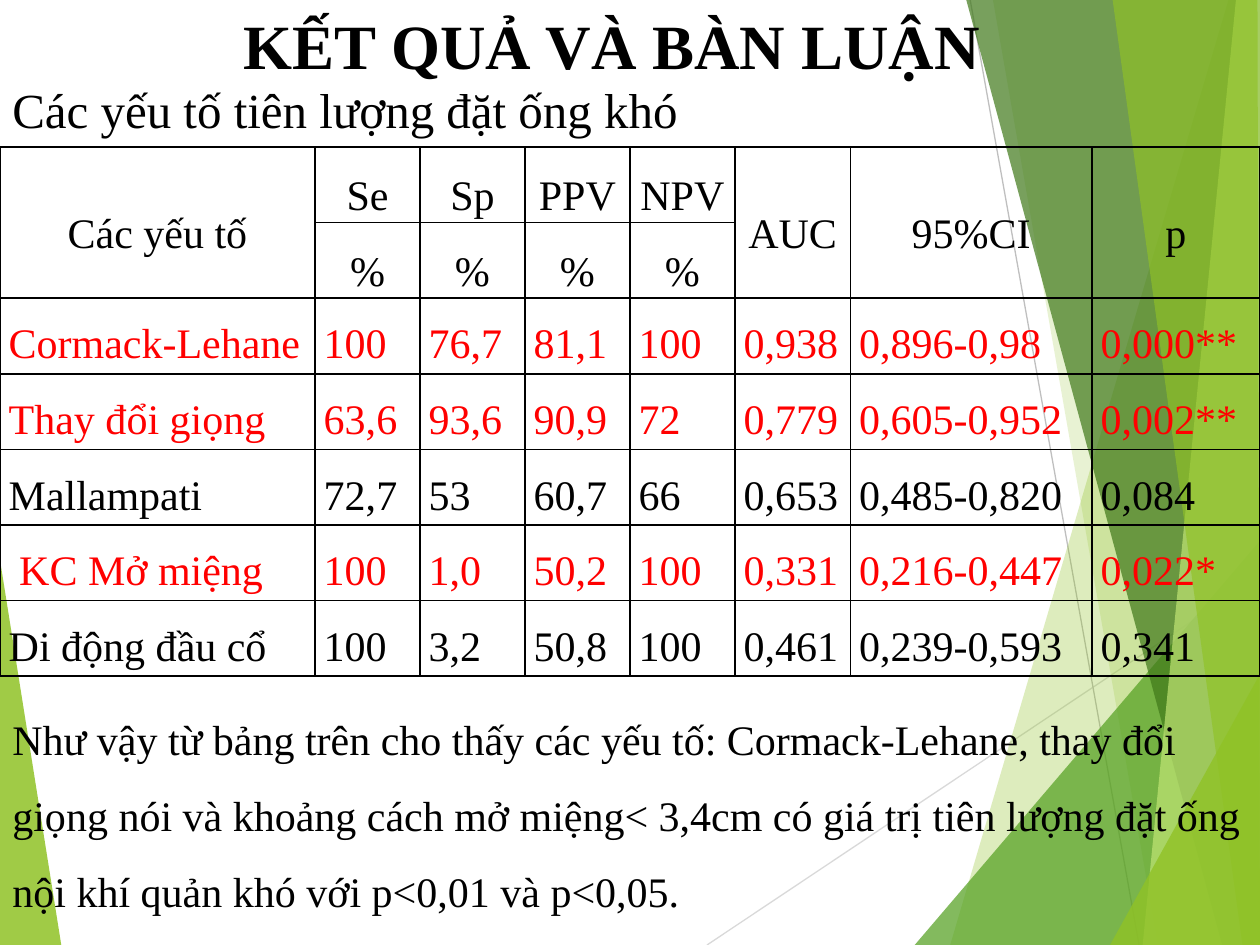
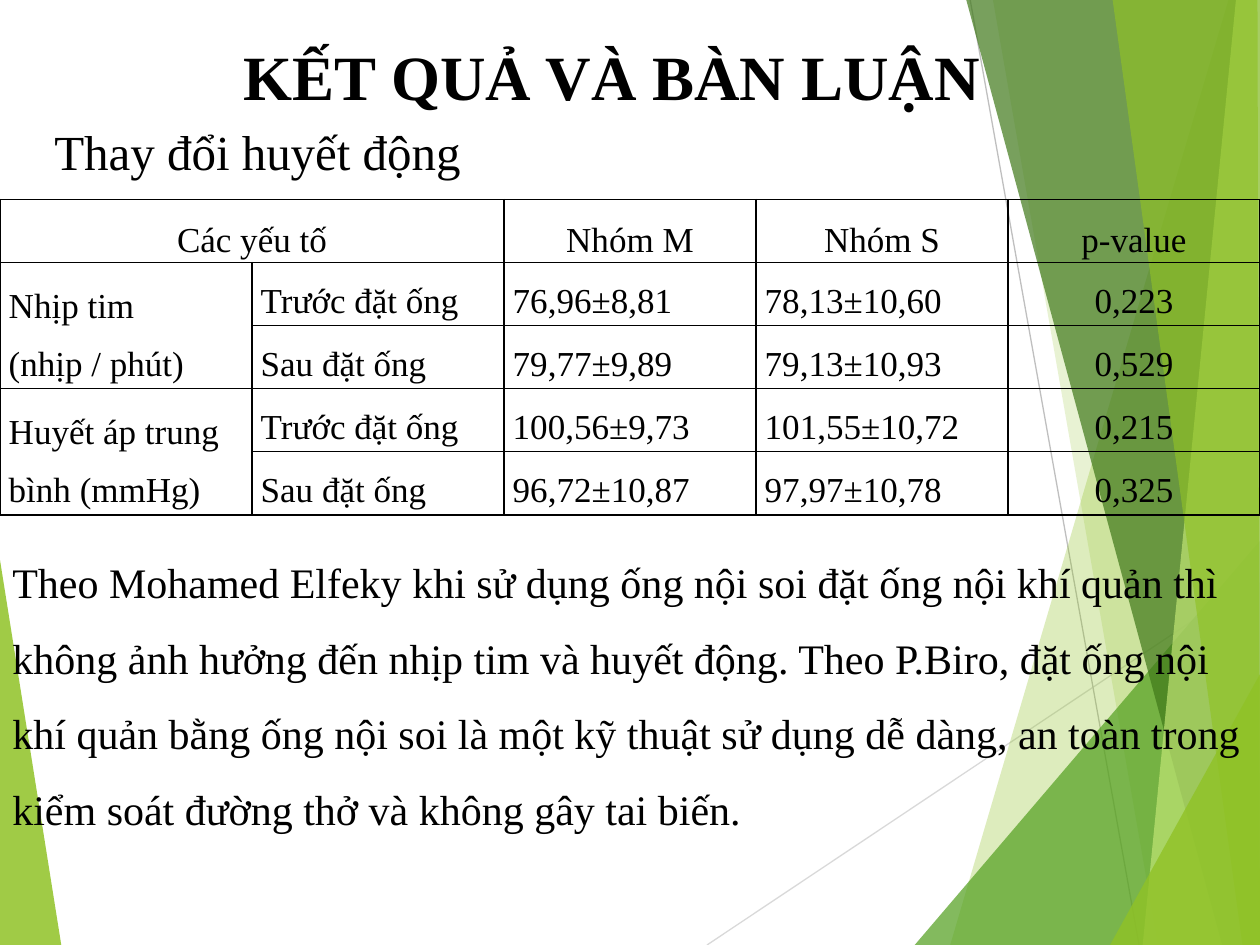
from lxml import etree
from pptx import Presentation
from pptx.dml.color import RGBColor
from pptx.enum import shapes, text
from pptx.oxml import ns
from pptx.util import Pt

FONT = "Times New Roman"
BLACK = RGBColor(0x00, 0x00, 0x00)
RED = RGBColor(0xFF, 0x00, 0x00)
LIME = RGBColor(0x90, 0xC2, 0x26)
GREEN = RGBColor(0x54, 0xA0, 0x21)
DARK_GREEN = RGBColor(0x3F, 0x78, 0x19)
PALE_GREEN = RGBColor(0xC0, 0xE4, 0x74)
LIGHT_GRAY = RGBColor(0xD9, 0xD9, 0xD9)
GRAY = RGBColor(0xBF, 0xBF, 0xBF)

WIDTH, HEIGHT = 720, 540
TITLE = "KẾT QUẢ VÀ BÀN LUẬN"
LEFT, CENTER, JUSTIFY = text.PP_ALIGN.LEFT, text.PP_ALIGN.CENTER, text.PP_ALIGN.JUSTIFY

RAYS = [
    ((LIGHT_GRAY, (404, 540), (720, 329))),
    ((GRAY, (554.4, 0), (650.9, 540))),
]
LEFT_BAND = (LIME, 85, [(0, 320), (35, 540), (0, 540)])
RIGHT_BANDS = [
    (LIME, 30, [(702, 0), (543, 540), (720, 540), (720, 0)]),
    (LIME, 20, [(567.4, 0), (661.7, 540), (720, 540), (720, 0)]),
    (GREEN, 72, [(522.7, 540), (720, 309), (720, 540)]),
    (DARK_GREEN, 70, [(552.2, 0), (698.4, 540), (720, 540), (720, 0)]),
    (PALE_GREEN, 70, [(706.3, 0), (653, 540), (720, 540), (720, 0)]),
    (LIME, 65, [(635.8, 0), (710, 540), (720, 540), (718.6, 0)]),
    (LIME, 80, [(634.3, 540), (720, 385.2), (720, 540)]),
]

FACTOR_COLUMNS = [180, 60, 60, 60, 60, 66, 138, 96]
FACTOR_ROWS = [
    ["Các yếu tố", "Se", "Sp", "PPV", "NPV", "AUC", "95%CI", "p"],
    ["", "%", "%", "%", "%", "", "", ""],
    ["Cormack-Lehane", "100", "76,7", "81,1", "100", "0,938", "0,896-0,98", "0,000**"],
    ["Thay đổi giọng", "63,6", "93,6", "90,9", "72", "0,779", "0,605-0,952", "0,002**"],
    ["Mallampati", "72,7", "53", "60,7", "66", "0,653", "0,485-0,820", "0,084"],
    [" KC Mở miệng", "100", "1,0", "50,2", "100", "0,331", "0,216-0,447", "0,022*"],
    ["Di động đầu cổ", "100", "3,2", "50,8", "100", "0,461", "0,239-0,593", "0,341"],
]
FACTOR_MERGES = [((0, col), (1, col)) for col in (0, 5, 6, 7)]

HEMODYNAMIC_ROWS = [
    ["Các yếu tố", "", "Nhóm M", "Nhóm S", "p-value"],
    ["Nhịp tim\n(nhịp / phút)", "Trước đặt ống", "76,96±8,81", "78,13±10,60", "0,223"],
    ["", "Sau đặt ống", "79,77±9,89", "79,13±10,93", "0,529"],
    ["Huyết áp trung bình (mmHg)", "Trước đặt ống", "100,56±9,73", "101,55±10,72", "0,215"],
    ["", "Sau đặt ống", "96,72±10,87", "97,97±10,78", "0,325"],
]
HEMODYNAMIC_MERGES = [((0, 0), (0, 1)), ((1, 0), (2, 0)), ((3, 0), (4, 0))]


def format_text(tf, size, color=BLACK, align=LEFT, spacing=None, bold=False):
    for p in tf.paragraphs:
        p.alignment = align
        p.line_spacing = spacing
        p.font.name = FONT
        p.font.size = Pt(size)
        p.font.bold = bold
        p.font.color.rgb = color


def place(shape, left, top, width, height):
    shape.left, shape.top = Pt(left), Pt(top)
    shape.width, shape.height = Pt(width), Pt(height)


def add_band(s, color, opacity, points):
    start, *rest = [(Pt(x), Pt(y)) for x, y in points]
    builder = s.shapes.build_freeform(*start)
    builder.add_line_segments(rest, close=True)
    sp = builder.convert_to_shape()
    sp.shadow.inherit = False
    sp.line.fill.background()
    sp.fill.solid()
    sp.fill.fore_color.rgb = color
    clr = next(sp.element.spPr.iter(ns.qn("a:srgbClr")))
    etree.SubElement(clr, ns.qn("a:alpha"), val=str(opacity * 1000))
    return sp


def add_ray(s, color, start, end):
    line = s.shapes.add_connector(
        shapes.MSO_CONNECTOR.STRAIGHT, *[Pt(v) for v in start + end])
    line.line.color.rgb = color
    line.line.width = Pt(0.75)
    etree.SubElement(line.element.spPr, ns.qn("a:effectLst"))
    return line


def decorate_layout(layout, s):
    decor = [add_band(s, *LEFT_BAND)]
    decor += [add_ray(s, *ray) for ray in RAYS]
    decor += [add_band(s, *band) for band in RIGHT_BANDS]
    for index, sp in enumerate(decor, start=2):
        layout.shapes.element.insert(index, sp.element)


def set_title(s, top):
    title = s.shapes.title
    place(title, 132, top, 439, 51)
    tf = title.text_frame
    tf.text = TITLE
    tf.word_wrap = False
    tf.auto_size = text.MSO_AUTO_SIZE.NONE
    tf.vertical_anchor = text.MSO_ANCHOR.TOP
    format_text(tf, 36, bold=True)


def add_text(s, words, left, top, width, height, size, spacing=None, wrap=True):
    box = s.shapes.add_textbox(Pt(left), Pt(top), Pt(width), Pt(height))
    tf = box.text_frame
    tf.word_wrap = wrap
    tf.text = words
    format_text(tf, size, spacing=spacing)


def add_subtitle(s, words, left, top, width):
    add_text(s, words, left, top, width, 41, 28, wrap=False)


def add_conclusion(s, words, top, height):
    add_text(s, words, 0, top, WIDTH, height, 24, spacing=1.5)


def set_borders(cell):
    tcPr = cell._tc.get_or_add_tcPr()
    for index, side in enumerate("LRTB"):
        ln = etree.Element(ns.qn(f"a:ln{side}"), w=str(Pt(1)))
        fill = etree.SubElement(ln, ns.qn("a:solidFill"))
        etree.SubElement(fill, ns.qn("a:srgbClr"), val=str(BLACK))
        tcPr.insert(index, ln)


def add_grid(s, rows, top, widths, row_height, size, header_rows, aligns, merges, red_rows=()):
    frame = s.shapes.add_table(
        len(rows), len(widths), 0, Pt(top), Pt(WIDTH), Pt(row_height * len(rows)))
    table = frame.table
    table.first_row = table.horz_banding = False
    for column, width in zip(table.columns, widths):
        column.width = Pt(width)
    for row in table.rows:
        row.height = Pt(row_height)
    for start, end in merges:
        table.cell(*start).merge(table.cell(*end))
    for r, row in enumerate(rows):
        for c, words in enumerate(row):
            cell = table.cell(r, c)
            header = r < header_rows
            cell.fill.background()
            set_borders(cell)
            cell.margin_left = cell.margin_right = Pt(5)
            cell.margin_top = cell.margin_bottom = 0
            middle = header or cell.is_merge_origin
            cell.vertical_anchor = text.MSO_ANCHOR.MIDDLE if middle else text.MSO_ANCHOR.TOP
            cell.text = words
            format_text(cell.text_frame, size, RED if r in red_rows else BLACK,
                        CENTER if header else aligns[c], 1.5)


def build_factors(s):
    set_title(s, 0)
    add_grid(s, FACTOR_ROWS, 84, FACTOR_COLUMNS, 43.2, 24, 2,
             [LEFT] * 8, FACTOR_MERGES, red_rows=(2, 3, 5))
    add_subtitle(s, "Các yếu tố tiên lượng đặt ống khó", 0, 42, 398)
    add_conclusion(
        s, "Như vậy từ bảng trên cho thấy các yếu tố: Cormack-Lehane, thay đổi giọng nói "
        "và khoảng cách mở miệng< 3,4cm có giá trị tiên lượng đặt ống nội khí quản khó "
        "với p<0,01 và p<0,05.", 390, 138)


def build_hemodynamics(s):
    set_title(s, 18)
    add_subtitle(s, "Thay đổi huyết động", 24, 66, 249)
    add_grid(s, HEMODYNAMIC_ROWS, 114, [WIDTH / 5] * 5, 36, 20, 1,
             [LEFT, JUSTIFY, JUSTIFY, JUSTIFY, CENTER], HEMODYNAMIC_MERGES)
    add_conclusion(
        s, "Theo Mohamed Elfeky khi sử dụng ống nội soi đặt ống nội khí quản thì không ảnh "
        "hưởng đến nhịp tim và huyết động. Theo P.Biro, đặt ống nội khí quản bằng "
        "ống nội soi là một kỹ thuật sử dụng dễ dàng, an toàn trong kiểm soát đường thở "
        "và không gây tai biến.", 300, 181)


def main():
    prs = Presentation()
    prs.slide_width, prs.slide_height = Pt(WIDTH), Pt(HEIGHT)
    layout = prs.slide_layouts.get_by_name("Title Only")
    factors = prs.slides.add_slide(layout)
    decorate_layout(layout, factors)
    build_factors(factors)
    build_hemodynamics(prs.slides.add_slide(layout))
    prs.save("out.pptx")


if __name__ == "__main__":
    main()
